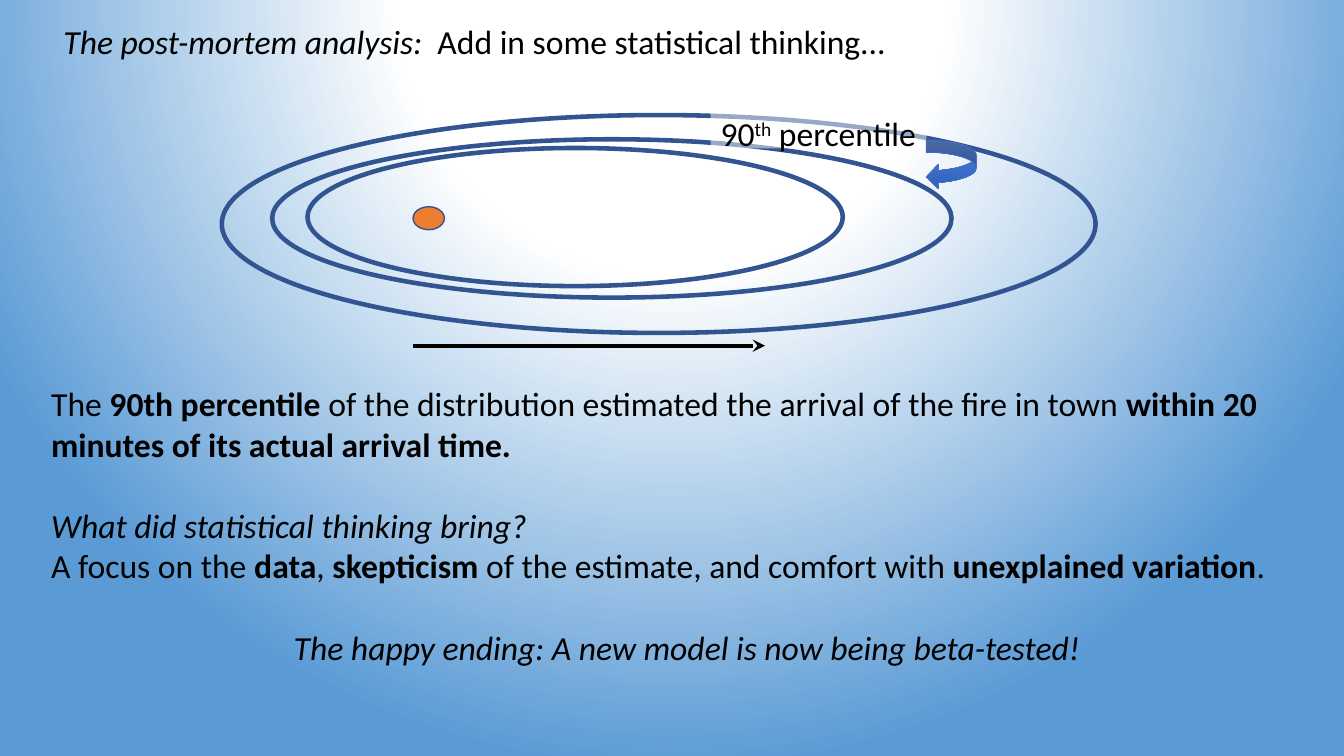
"""Build a slide on statistical thinking in wildfire spread estimates."""
import lxml.etree
import pptx
import pptx.dml.color
import pptx.enum.shapes
import pptx.enum.text
import pptx.oxml.ns
import pptx.util

Cm = pptx.util.Cm
Pt = pptx.util.Pt
qn = pptx.oxml.ns.qn
SHAPES = pptx.enum.shapes.MSO_SHAPE
ALIGN = pptx.enum.text.PP_ALIGN
BOLD = {"bold": True}
ITALIC = {"italic": True}


def color(value):
    return pptx.dml.color.RGBColor.from_string(value)


def add_element(parent, tag, **attributes):
    element = lxml.etree.SubElement(parent, qn(tag))
    for name, value in attributes.items():
        element.set(name, str(value))
    return element


class SlideBuilder:
    text_format = {"name": "Calibri", "size": Pt(24)}
    text_color = "000000"
    outline_color = "325491"
    blank_line = Pt(29.3)

    def __init__(self, slide):
        self.slide = slide

    def gradient(self, fill, owner, stops):
        fill.gradient()
        gradient = next(owner.iter(qn("a:gradFill")))
        for child in list(gradient):
            gradient.remove(child)
        stop_list = add_element(gradient, "a:gsLst")
        for position, value in stops:
            stop = add_element(stop_list, "a:gs", pos=position * 1000)
            add_element(stop, "a:srgbClr", val=value)
        return gradient

    def background(self, stops):
        gradient = self.gradient(self.slide.background.fill, self.slide.element, stops)
        circle = add_element(gradient, "a:path", path="circle")
        add_element(circle, "a:fillToRect", l=50000, t=-80000, r=50000, b=180000)

    def shape(self, kind, box, line_width, line_color=outline_color, fill=None):
        shape = self.slide.shapes.add_shape(kind, *map(Cm, box))
        shape.shadow.inherit = False
        shape.line.color.rgb = color(line_color)
        shape.line.width = Pt(line_width)
        if fill is None:
            shape.fill.background()
        elif isinstance(fill, str):
            shape.fill.solid()
            shape.fill.fore_color.rgb = color(fill)
        else:
            gradient = self.gradient(shape.fill, shape.element, fill)
            add_element(gradient, "a:lin", ang=5400000, scaled=0)

    def arrow(self, start, end, width):
        connector = self.slide.shapes.add_connector(
            pptx.enum.shapes.MSO_CONNECTOR.STRAIGHT, *map(Cm, start + end))
        connector.line.color.rgb = color(self.text_color)
        connector.line.width = Pt(width)
        add_element(connector.line._get_or_add_ln(), "a:tailEnd", type="stealth")
        add_element(connector.element.spPr, "a:effectLst")

    def text(self, box, paragraphs, wrap=True):
        shape = self.slide.shapes.add_textbox(*map(Cm, box))
        frame = shape.text_frame
        frame.word_wrap = wrap
        for index, (layout, runs) in enumerate(paragraphs):
            paragraph = frame.paragraphs[0] if index == 0 else frame.add_paragraph()
            for name, value in layout.items():
                setattr(paragraph, name, value)
            for content, style in runs:
                run = paragraph.add_run()
                run.text = content
                run.font.color.rgb = color(self.text_color)
                for name, value in {**self.text_format, **style}.items():
                    if name == "baseline":
                        run.font._element.set(name, str(value))
                    else:
                        setattr(run.font, name, value)
        return shape

    def translucent_label(self, box, runs, fill, opacity):
        shape = self.text(box, [({}, runs)], wrap=False)
        shape.fill.solid()
        shape.fill.fore_color.rgb = color(fill)
        fill_color = next(shape.element.spPr.iter(qn("a:srgbClr")))
        add_element(fill_color, "a:alpha", val=opacity * 1000)


def main():
    presentation = pptx.Presentation()
    presentation.slide_width = Cm(33.87)
    presentation.slide_height = Cm(19.05)
    slide = presentation.slides.add_slide(presentation.slide_layouts[6])
    builder = SlideBuilder(slide)
    builder.background([(0, "FFFFFF"), (35, "FFFFFF"), (100, "5B9BD5")])

    builder.text((1.35, 0.41, 31.62, 4.11), [({}, [
        ("The post-mortem analysis:  ", ITALIC),
        ("Add in some statistical thinking...", {}),
    ])])

    fire_perimeters = [
        (5.59, 2.9, 22.02, 5.49),
        (7.75, 3.73, 13.49, 3.48),
        (6.86, 3.51, 17.12, 3.99),
    ]
    for perimeter in fire_perimeters:
        builder.shape(SHAPES.OVAL, perimeter, 3.25)
    builder.shape(SHAPES.OVAL, (10.41, 5.21, 0.79, 0.58), 1, fill="ED7D31")
    builder.arrow((10.41, 8.71), (19.28, 8.71), 3)
    builder.translucent_label(
        (17.91, 2.72, 5.44, 1.02),
        [("90", {}), ("th", {"baseline": 30000}), (" percentile", {})],
        "FFFFFF", 50)
    builder.shape(SHAPES.CURVED_LEFT_ARROW, (23.34, 3.53, 1.27, 1.24), 0.5, "4472C4",
                  [(0, "6183CB"), (50, "3E70CA"), (100, "3062BB")])

    after_gap = {"space_before": builder.blank_line}
    builder.text((1.04, 9.53, 32.54, 8.2), [
        ({}, [
            ("The", {}),
            (" 90th percentile ", BOLD),
            ("of the distribution estimated the arrival of the fire in town", {}),
            (" within 20 minutes of its actual arrival time.", BOLD),
        ]),
        (after_gap, [("What did statistical thinking bring?", ITALIC)]),
        ({}, [
            ("A focus on the ", {}),
            ("data", BOLD),
            (", ", {}),
            ("skepticism ", BOLD),
            ("of the estimate, and comfort with ", {}),
            ("unexplained variation", BOLD),
            (".", {}),
        ]),
        ({**after_gap, "alignment": ALIGN.CENTER}, [
            ("The happy ending: A new model is now being beta-tested!", ITALIC),
        ]),
    ])
    presentation.save("out.pptx")


if __name__ == "__main__":
    main()
